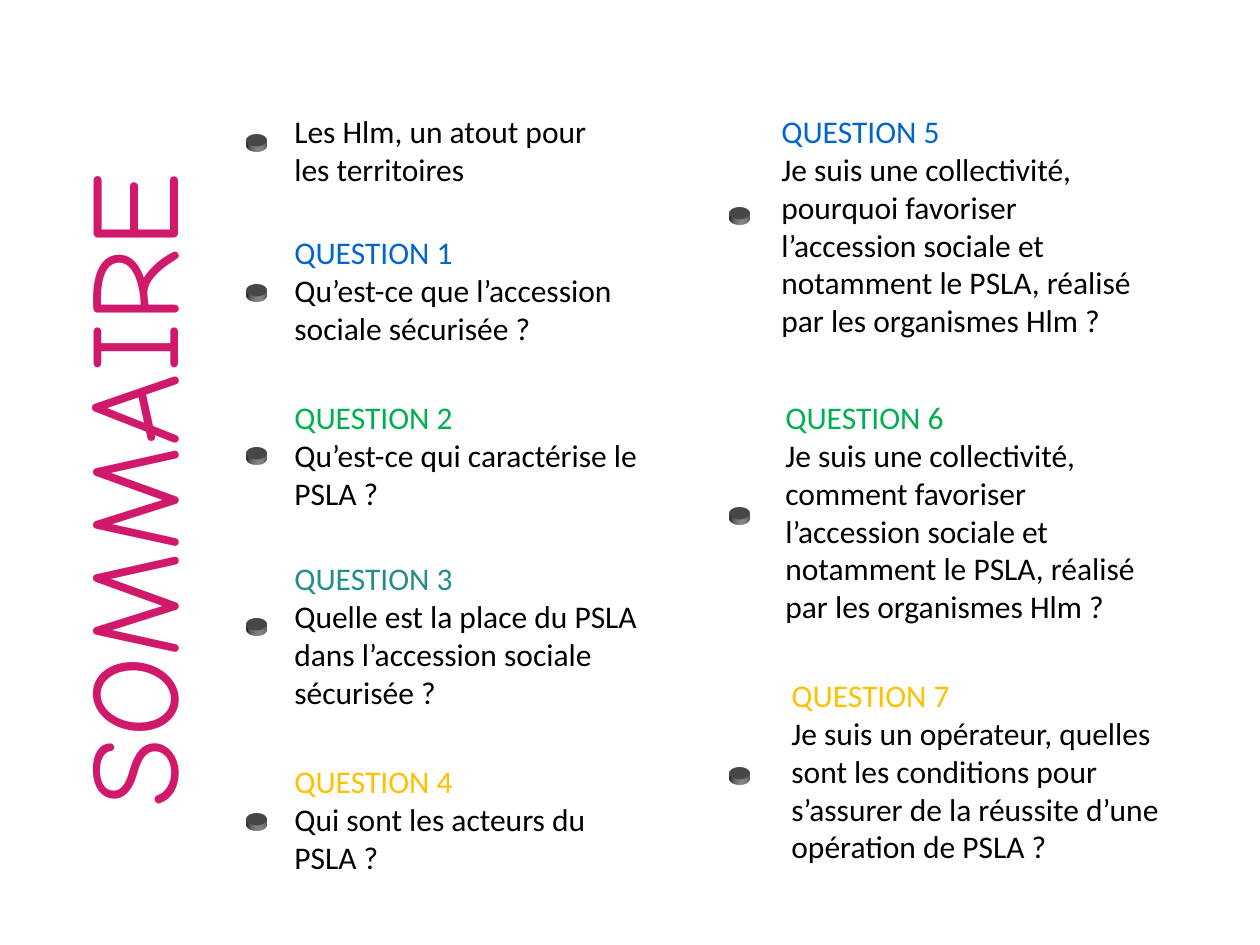
from lxml import etree
from pptx import Presentation, util as u
from pptx.dml.color import RGBColor
from pptx.enum import shapes, text
from pptx.oxml import ns

EMU_PER_PX = 914400 / 126
BLACK, WHITE, PINK = "000000", "FFFFFF", "D1196C"
BLUE, GREEN, TEAL, YELLOW = "0066CC", "00B050", "238D8A", "FFC000"


def px(length):
    return u.Emu(round(length * EMU_PER_PX))


def add_run(paragraph, words, font, size, color):
    run = paragraph.add_run()
    run.text = words
    run.font.name = font
    run.font.size = u.Pt(size)
    run.font.color.rgb = RGBColor.from_string(color)


presentation = Presentation()
presentation.slide_width, presentation.slide_height = px(1260), px(945)
slide = presentation.slides.add_slide(presentation.slide_layouts[5])

title = slide.shapes.title
title.left, title.top, title.width, title.height = px(-239), px(370), px(735), px(165)
title.rotation = 270
title.text_frame.auto_size = text.MSO_AUTO_SIZE.NONE
title.text_frame.vertical_anchor = text.MSO_ANCHOR.TOP
paragraph = title.text_frame.paragraphs[0]
paragraph.alignment = text.PP_ALIGN.LEFT
add_run(paragraph, "SOMMAIRE", "Comic Neue", 72, PINK)

# left, top, width, height, heading, heading color, body
entries = [
    (282, 106, 338, 89, "", BLACK, "Les Hlm, un atout pour les territoires"),
    (282, 227, 417, 127, "QUESTION 1", BLUE, "Qu’est-ce que l’accession sociale sécurisée ?"),
    (282, 392, 377, 127, "QUESTION 2", GREEN, "Qu’est-ce qui caractérise le PSLA ?"),
    (282, 553, 377, 165, "QUESTION 3", TEAL,
     "Quelle est la place du PSLA dans l’accession sociale sécurisée ?"),
    (282, 756, 377, 127, "QUESTION 4", YELLOW, "Qui sont les acteurs du PSLA ?"),
    (769, 106, 377, 242, "QUESTION 5", BLUE,
     "Je suis une collectivité, pourquoi favoriser l’accession sociale et "
     "notamment le PSLA, réalisé par les organismes Hlm ?"),
    (773, 392, 377, 242, "QUESTION 6", GREEN,
     "Je suis une collectivité, comment favoriser l’accession sociale et "
     "notamment le PSLA, réalisé par les organismes Hlm ?"),
    (779, 670, 407, 204, "QUESTION 7", YELLOW,
     "Je suis un opérateur, quelles sont les conditions pour s’assurer de la "
     "réussite d’une opération de PSLA ?"),
]
for left, top, width, height, heading, color, body in entries:
    box = slide.shapes.add_textbox(px(left), px(top), px(width), px(height))
    box.text_frame.word_wrap = True
    paragraph = box.text_frame.paragraphs[0]
    if heading:
        add_run(paragraph, heading, "Calibri", 18, color)
        paragraph.add_line_break()
    add_run(paragraph, body, "Calibri", 18, BLACK)

# Each bullet is a small disc tilted back and extruded
DISC_DEPTH = (
    f'<a:scene3d {ns.nsdecls("a")}><a:camera prst="perspectiveRelaxed"/>'
    '<a:lightRig rig="threePt" dir="t"/></a:scene3d>',
    f'<a:sp3d {ns.nsdecls("a")} extrusionH="50800"/>',
)
bullet_columns = {247: (131, 281, 444, 615, 810), 729: (204, 504, 764)}
for left, tops in bullet_columns.items():
    for top in tops:
        disc = slide.shapes.add_shape(
            shapes.MSO_SHAPE.OVAL, px(left), px(top), px(20), px(19))
        disc.shadow.inherit = False
        disc.fill.solid()
        disc.fill.fore_color.rgb = RGBColor.from_string(BLACK)
        disc.line.color.rgb = RGBColor.from_string(WHITE)
        disc.line.width = u.Pt(2.75)
        for part in DISC_DEPTH:
            disc.element.spPr.append(etree.fromstring(part))

presentation.save("out.pptx")
